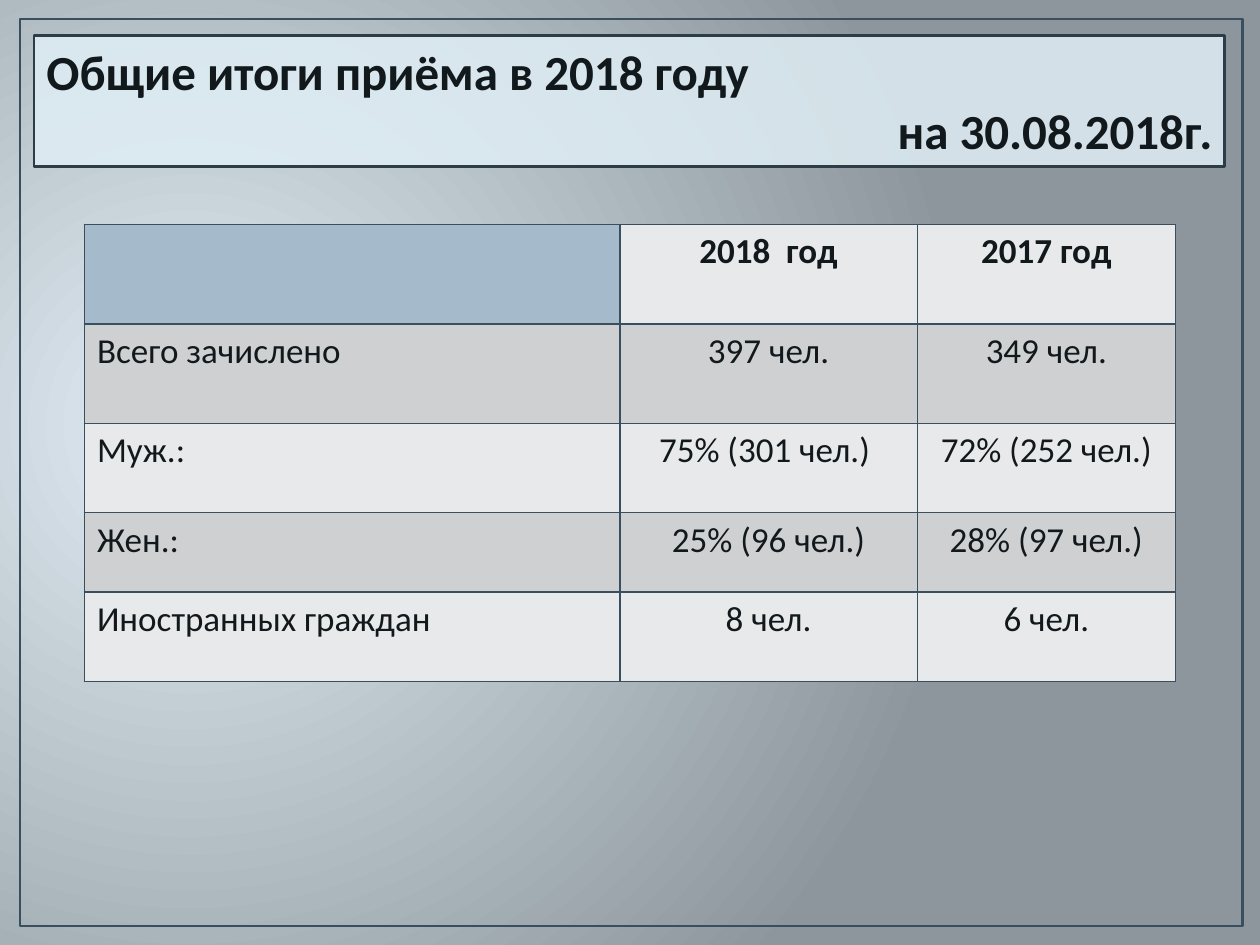
from dataclasses import dataclass

from lxml import etree
from pptx import Presentation
from pptx.dml.color import RGBColor
from pptx.enum.shapes import MSO_SHAPE
from pptx.enum.text import MSO_ANCHOR, PP_ALIGN
from pptx.oxml import parse_xml
from pptx.oxml.ns import nsdecls, qn
from pptx.util import Inches, Pt

RECTANGLE = MSO_SHAPE.RECTANGLE
TOP = MSO_ANCHOR.TOP
LEFT, CENTER, RIGHT = PP_ALIGN.LEFT, PP_ALIGN.CENTER, PP_ALIGN.RIGHT


@dataclass(frozen=True)
class Theme:
    font: str = "Calibri"
    title_size: float = 28
    table_size: float = 20
    line_width: float = 1.5
    border_width: float = 1
    text: str = "12191D"
    glow_center: str = "E1ECF4"
    glow_edge: str = "8C969C"
    frame: str = "394F60"
    title_fill: str = "E0EEF5"
    title_line: str = "2D3D48"
    corner: str = "A5BACA"
    light_row: str = "E8E9EA"
    dark_row: str = "CED0D2"


@dataclass(frozen=True)
class Panel:
    left: float
    top: float
    width: float
    height: float
    line: str
    fill: str | None = None
    opacity: int = 100


THEME = Theme()
FRAME = Panel(0.16, 0.15, 9.7, 7.2, THEME.frame)
TITLE = Panel(0.27, 0.28, 9.45, 1.04, THEME.title_line, THEME.title_fill, 85)
TITLE_LINES = [("Общие итоги приёма в 2018 году", LEFT), ("на 30.08.2018г.", RIGHT)]

TABLE_LEFT, TABLE_TOP = 0.67, 1.78
COLUMN_WIDTHS = [4.25, 2.36, 2.05]
ROW_HEIGHTS = [0.79, 0.79, 0.71, 0.63, 0.71]
ADMISSION_ROWS = [
    ["", "2018  год", "2017 год"],
    ["Всего зачислено", "397 чел.", "349 чел."],
    ["Муж.:", "75% (301 чел.) ", "72% (252 чел.)"],
    ["Жен.:", "25% (96 чел.)", "28% (97 чел.)"],
    ["Иностранных граждан", "8 чел.", "6 чел."],
]


def paint_background(slide) -> None:
    """Fill the background with a radial glow centred near the left edge."""
    fill = slide.background.fill
    fill.gradient()
    for stop, color in zip(fill.gradient_stops, (THEME.glow_center, THEME.glow_edge)):
        stop.color.rgb = RGBColor.from_string(color)
    gradient = slide.element.find(".//" + qn("a:gradFill"))
    gradient.replace(gradient.find(qn("a:lin")), parse_xml(
        f'<a:path {nsdecls("a")} path="circle">'
        '<a:fillToRect l="15000" t="50000" r="85000" b="60000"/></a:path>'))


def add_panel(slide, panel: Panel):
    box = slide.shapes.add_shape(
        RECTANGLE, Inches(panel.left), Inches(panel.top),
        Inches(panel.width), Inches(panel.height))
    box.shadow.inherit = False
    box.line.color.rgb = RGBColor.from_string(panel.line)
    box.line.width = Pt(THEME.line_width)
    if panel.fill is None:
        box.fill.background()
        return box
    box.fill.solid()
    box.fill.fore_color.rgb = RGBColor.from_string(panel.fill)
    color = box.fill._xPr.find(qn("a:solidFill"))[0]
    etree.SubElement(color, qn("a:alpha"), val=str(panel.opacity * 1000))
    return box


def write(para, text: str, size: float, bold: bool, alignment) -> None:
    para.alignment = alignment
    span = para.add_run()
    span.text = text
    formats = {"name": THEME.font, "size": Pt(size), "bold": bold}
    for name, value in formats.items():
        setattr(span.font, name, value)
    span.font.color.rgb = RGBColor.from_string(THEME.text)


def add_title(slide) -> None:
    frame = add_panel(slide, TITLE).text_frame
    frame.word_wrap = True
    frame.vertical_anchor = TOP
    for index, (text, alignment) in enumerate(TITLE_LINES):
        para = frame.add_paragraph() if index else frame.paragraphs[0]
        write(para, text, THEME.title_size, True, alignment)


def add_borders(cell) -> None:
    properties = cell._tc.get_or_add_tcPr()
    for side in ("lnL", "lnR", "lnT", "lnB"):
        properties.append(parse_xml(
            f'<a:{side} {nsdecls("a")} w="{Pt(THEME.border_width)}"><a:solidFill>'
            f'<a:srgbClr val="{THEME.frame}"/></a:solidFill></a:{side}>'))


def cell_color(row: int, column: int) -> str:
    if row == 0 and column == 0:
        return THEME.corner
    return THEME.dark_row if row % 2 else THEME.light_row


def add_admission_table(slide) -> None:
    table = slide.shapes.add_table(
        len(ROW_HEIGHTS), len(COLUMN_WIDTHS), Inches(TABLE_LEFT), Inches(TABLE_TOP),
        Inches(sum(COLUMN_WIDTHS)), Inches(sum(ROW_HEIGHTS))).table
    for column, width in zip(table.columns, COLUMN_WIDTHS):
        column.width = Inches(width)
    for row, height in zip(table.rows, ROW_HEIGHTS):
        row.height = Inches(height)
    for row, texts in enumerate(ADMISSION_ROWS):
        for column, text in enumerate(texts):
            cell = table.cell(row, column)
            add_borders(cell)
            cell.fill.solid()
            cell.fill.fore_color.rgb = RGBColor.from_string(cell_color(row, column))
            if text:
                write(cell.text_frame.paragraphs[0], text, THEME.table_size,
                      row == 0, CENTER if column else LEFT)


def main() -> None:
    deck = Presentation()
    deck.slide_width, deck.slide_height = Inches(10), Inches(7.5)
    page = deck.slides.add_slide(deck.slide_layouts[6])
    paint_background(page)
    add_panel(page, FRAME)
    add_title(page)
    add_admission_table(page)
    deck.save("out.pptx")


if __name__ == "__main__":
    main()
